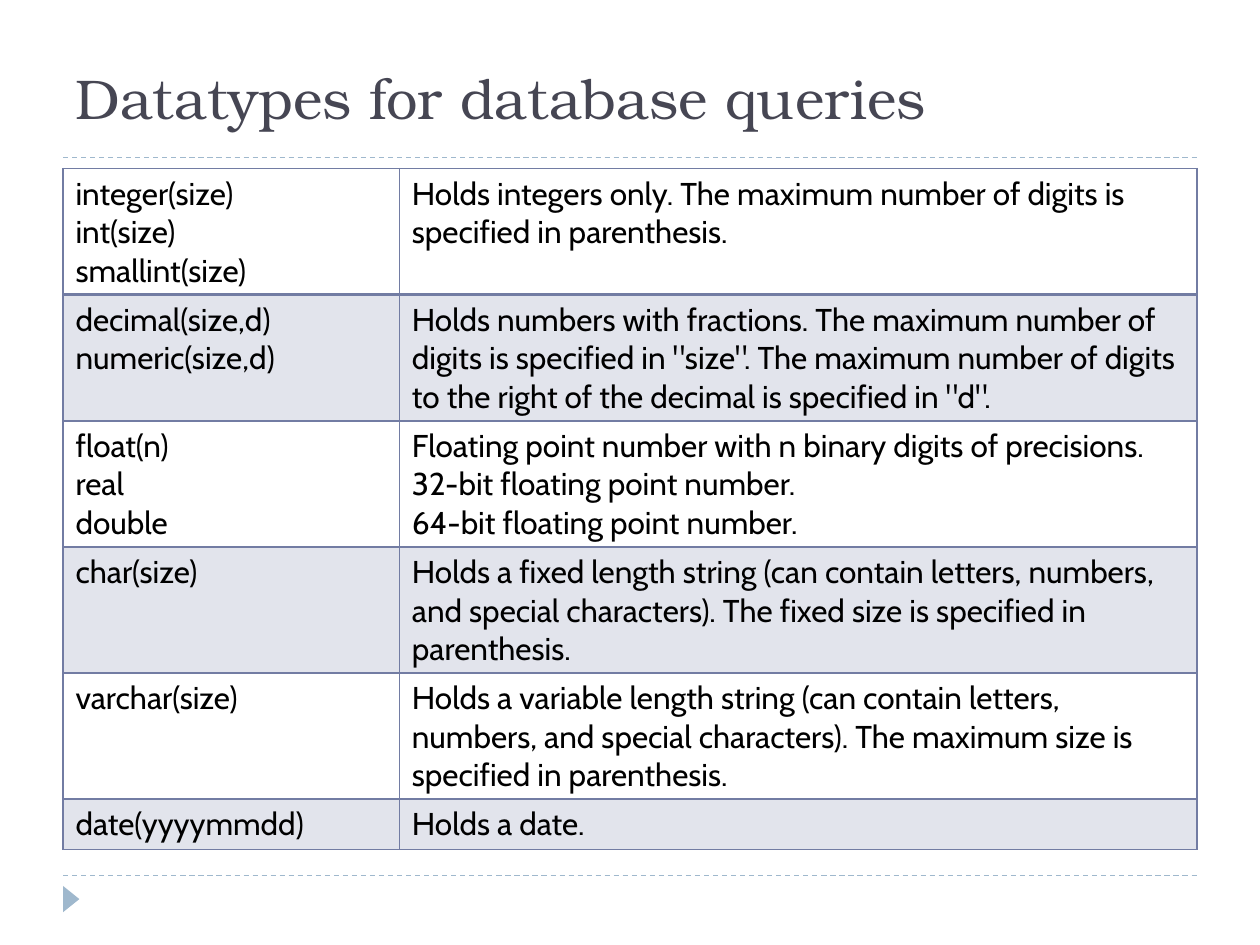
from dataclasses import dataclass

import lxml.etree
import pptx
import pptx.dml.color
import pptx.enum.dml
import pptx.enum.shapes
import pptx.enum.text
import pptx.oxml.ns
import pptx.util

Cm = pptx.util.Cm
Pt = pptx.util.Pt
qn = pptx.oxml.ns.qn


@dataclass(frozen=True)
class Theme:
    title_font: str = "TeX Gyre Bonum"
    body_font: str = "Cabin"
    title_size: int = 32
    body_size: int = 18
    title_color: str = "464653"
    body_color: str = "000000"
    accent: str = "9FB8CD"
    table_color: str = "727CA3"
    band_opacity: int = 20


@dataclass(frozen=True)
class DatatypeRow:
    names: list[str]
    descriptions: list[str]
    height: float = 2.46


THEME = Theme()
LEFT, WIDTH = 1.27, 22.86
RULE_POSITIONS = (17.65, 3.18)
COLUMN_WIDTHS = (6.78, 16.08)

ROWS = [
    DatatypeRow(
        ["integer(size)\nint(size)\nsmallint(size)"],
        ["Holds integers only. The maximum number of digits is specified in parenthesis."],
    ),
    DatatypeRow(
        ["decimal(size,d)\nnumeric(size,d)"],
        ['Holds numbers with fractions. The maximum number of digits is specified in "size". '
         'The maximum number of digits to the right of the decimal is specified in "d".'],
    ),
    DatatypeRow(
        ["float(n)", "real", "double"],
        ["Floating point number with n binary digits of precisions.",
         "32-bit floating point number.",
         "64-bit floating point number."],
    ),
    DatatypeRow(
        ["char(size)"],
        ["Holds a fixed length string (can contain letters, numbers, and special characters). "
         "The fixed size is specified in parenthesis."],
        1.73,
    ),
    DatatypeRow(
        ["varchar(size)"],
        ["Holds a variable length string (can contain letters, numbers, and special characters). "
         "The maximum size is specified in parenthesis."],
    ),
    DatatypeRow(["date(yyyymmdd)"], ["Holds a date."], 0.99),
]


def rgb(color: str) -> pptx.dml.color.RGBColor:
    return pptx.dml.color.RGBColor.from_string(color)


def write_text(text_frame, paragraphs: list[str], font: str, size: int, color: str) -> None:
    for index, text in enumerate(paragraphs):
        paragraph = text_frame.add_paragraph() if index else text_frame.paragraphs[0]
        for line_index, line in enumerate(text.split("\n")):
            if line_index:
                paragraph.add_line_break()
            run = paragraph.add_run()
            run.text = line
            run.font.name = font
            run.font.size = Pt(size)
            run.font.color.rgb = rgb(color)


def add_rule(slide, top: float) -> None:
    rule = slide.shapes.add_connector(
        pptx.enum.shapes.MSO_CONNECTOR.STRAIGHT,
        Cm(LEFT), Cm(top), Cm(LEFT + WIDTH), Cm(top),
    )
    rule.line.color.rgb = rgb(THEME.accent)
    rule.line.width = Pt(0.75)
    rule.line.dash_style = pptx.enum.dml.MSO_LINE.DASH
    lxml.etree.SubElement(rule.element.spPr, qn("a:effectLst"))


def add_marker(slide) -> None:
    marker = slide.shapes.add_shape(
        pptx.enum.shapes.MSO_SHAPE.ISOSCELES_TRIANGLE,
        Cm(1.17), Cm(17.96), Cm(0.53), Cm(0.33),
    )
    marker.rotation = 90
    marker.shadow.inherit = False
    marker.fill.solid()
    marker.fill.fore_color.rgb = rgb(THEME.accent)
    marker.line.fill.background()


def add_title(slide, text: str) -> None:
    title = slide.shapes.add_textbox(Cm(LEFT), Cm(0.43), Cm(WIDTH), Cm(2.34))
    title.text_frame.word_wrap = True
    title.text_frame.vertical_anchor = pptx.enum.text.MSO_ANCHOR.BOTTOM
    write_text(title.text_frame, [text], THEME.title_font, THEME.title_size, THEME.title_color)


def set_borders(cell, widths: dict[str, float]) -> None:
    properties = cell._tc.get_or_add_tcPr()
    for side, width in widths.items():
        border = lxml.etree.SubElement(properties, qn(f"a:ln{side}"), w=str(Pt(width)))
        fill = lxml.etree.SubElement(border, qn("a:solidFill"))
        lxml.etree.SubElement(fill, qn("a:srgbClr"), val=THEME.table_color)


def set_fill(cell, banded: bool) -> None:
    if not banded:
        cell.fill.background()
        return
    cell.fill.solid()
    cell.fill.fore_color.rgb = rgb(THEME.table_color)
    color = cell._tc.tcPr.find(f"{qn('a:solidFill')}/{qn('a:srgbClr')}")
    lxml.etree.SubElement(color, qn("a:alpha"), val=str(THEME.band_opacity * 1000))


def add_datatype_table(slide, rows: list[DatatypeRow]) -> None:
    height = sum(row.height for row in rows)
    table = slide.shapes.add_table(
        len(rows), len(COLUMN_WIDTHS), Cm(LEFT), Cm(3.4), Cm(WIDTH), Cm(height)
    ).table
    table.first_row = False
    table.horz_banding = False
    for column, width in zip(table.columns, COLUMN_WIDTHS):
        column.width = Cm(width)
    for row_index, row in enumerate(rows):
        table.rows[row_index].height = Cm(row.height)
        top = 2 if row_index == 1 else 1
        bottom = 2 if row_index == 0 else 1
        for column_index, paragraphs in enumerate((row.names, row.descriptions)):
            cell = table.cell(row_index, column_index)
            set_borders(cell, {"L": 1, "R": 1, "T": top, "B": bottom})
            set_fill(cell, row_index % 2 == 1)
            write_text(cell.text_frame, paragraphs,
                       THEME.body_font, THEME.body_size, THEME.body_color)


def main() -> None:
    presentation = pptx.Presentation()
    presentation.slide_width = Cm(25.4)
    presentation.slide_height = Cm(19.05)
    slide = presentation.slides.add_slide(presentation.slide_layouts[6])
    for top in RULE_POSITIONS:
        add_rule(slide, top)
    add_marker(slide)
    add_title(slide, "Datatypes for database queries")
    add_datatype_table(slide, ROWS)
    presentation.save("out.pptx")


if __name__ == "__main__":
    main()
